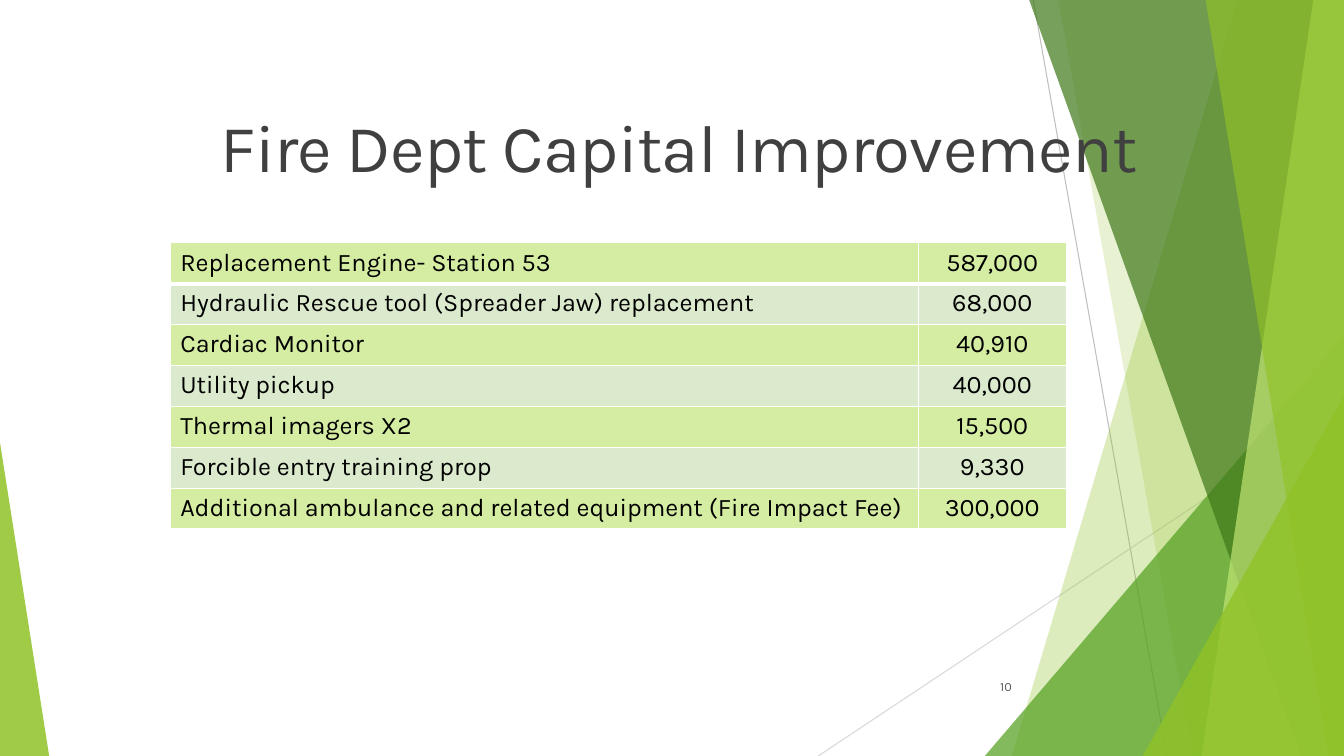
from lxml import etree
from pptx import Presentation
from pptx.dml.color import RGBColor
from pptx.enum.shapes import MSO_CONNECTOR, MSO_SHAPE
from pptx.enum.text import MSO_ANCHOR, PP_ALIGN
from pptx.oxml.ns import qn
from pptx.util import Cm, Pt

STRAIGHT = MSO_CONNECTOR.STRAIGHT
TRIANGLE = MSO_SHAPE.ISOSCELES_TRIANGLE
LEFT, CENTER, RIGHT = PP_ALIGN.LEFT, PP_ALIGN.CENTER, PP_ALIGN.RIGHT
MIDDLE, BOTTOM = MSO_ANCHOR.MIDDLE, MSO_ANCHOR.BOTTOM
FONT = "Karla"
WIDTH, HEIGHT, BLEED_TOP = 33.87, 19.05, -0.02
COLORS = {
    "white": "FFFFFF", "black": "000000", "title": "404040", "number": "595959",
    "line dark": "BFBFBF", "line light": "D9D9D9",
    "lime": "90C226", "green": "54A021", "forest": "3F7819", "pale": "C0E474",
    "odd row": "D5EDA2", "even row": "DBE9CD",
}


def paint(shape, color, opacity):
    """Fill a shape with a see-through colour, without outline or shadow."""
    shape.shadow.inherit = False
    shape.line.fill.background()
    shape.fill.solid()
    shape.fill.fore_color.rgb = RGBColor.from_string(COLORS[color])
    color_element = shape._element.spPr.find(qn("a:solidFill"))[0]
    etree.SubElement(color_element, qn("a:alpha"), val=str(opacity * 1000))


def write(text_frame, text, size, color, alignment):
    paragraph = text_frame.paragraphs[0]
    paragraph.alignment = alignment
    run = paragraph.add_run()
    run.text = text
    run.font.name = FONT
    run.font.size = Pt(size)
    run.font.color.rgb = RGBColor.from_string(COLORS[color])
    return paragraph


presentation = Presentation()
presentation.slide_width = Cm(WIDTH)
presentation.slide_height = Cm(HEIGHT)
slide = presentation.slides.add_slide(presentation.slide_layouts[6])
shapes = slide.shapes

# Thin background lines
for x1, y1, x2, y2, color in [
    (26.04, 0, 29.41, HEIGHT, "line dark"),
    (WIDTH, 10.24, 20.62, HEIGHT, "line light"),
]:
    line = shapes.add_connector(STRAIGHT, Cm(x1), Cm(y1), Cm(x2), Cm(y2))
    line.line.color.rgb = RGBColor.from_string(COLORS[color])
    line.line.width = Pt(0.75)
    etree.SubElement(line._element.spPr, qn("a:effectLst"))

# Overlapping facets: bands are (top x, bottom x) reaching the right edge,
# triangles are (left, top, width, apex position)
for kind, geometry, color, opacity in [
    ("band", (31.19, 25.5), "lime", 30),
    ("band", (26.67, 30.05), "lime", 20),
    ("triangle", (24.82, 8.46, 9.05, 1), "green", 72),
    ("band", (25.93, 32.79), "forest", 70),
    ("band", (33.1, 30.28), "pale", 70),
    ("band", (30.38, 33.48), "lime", 65),
    ("triangle", (28.8, 9.98, 5.07, 1), "lime", 80),
    ("triangle", (0, 11.15, 1.24, 0), "lime", 85),
]:
    if kind == "band":
        top_x, bottom_x = geometry
        builder = shapes.build_freeform(Cm(top_x), Cm(BLEED_TOP))
        corners = [(WIDTH, BLEED_TOP), (WIDTH, HEIGHT), (bottom_x, HEIGHT)]
        builder.add_line_segments([(Cm(x), Cm(y)) for x, y in corners], close=True)
        facet = builder.convert_to_shape()
    else:
        left, top, width, apex = geometry
        facet = shapes.add_shape(TRIANGLE, Cm(left), Cm(top), Cm(width), Cm(HEIGHT - top))
        facet.adjustments[0] = apex
    paint(facet, color, opacity)

# Slide number and title
number_box = shapes.add_textbox(Cm(23.85), Cm(16.79), Cm(1.9), Cm(1.02))
number_box.text_frame.word_wrap = True
number_box.text_frame.vertical_anchor = MIDDLE
write(number_box.text_frame, "10", 9, "number", RIGHT)

title_box = shapes.add_textbox(Cm(5.31), Cm(0.79), Cm(25.68), Cm(4.04))
title_box.text_frame.word_wrap = True
title_box.text_frame.vertical_anchor = BOTTOM
title = write(title_box.text_frame, "Fire Dept Capital Improvement", 48, "title", LEFT)
title.line_spacing = 0.85
title.runs[0].font._element.set("spc", "-50")

# Capital items
items = [
    ("Replacement Engine- Station 53", "587,000"),
    ("Hydraulic Rescue tool (Spreader Jaw) replacement", "68,000"),
    ("Cardiac Monitor", "40,910"),
    ("Utility pickup", "40,000"),
    ("Thermal imagers X2", "15,500"),
    ("Forcible entry training prop", "9,330"),
    ("Additional ambulance and related equipment (Fire Impact Fee)", "300,000"),
]
column_widths = [18.85, 3.73]
row_height = 1.03
table = shapes.add_table(
    len(items), 2, Cm(4.29), Cm(6.12), Cm(sum(column_widths)), Cm(row_height * len(items))
).table
table.first_row = False
table.horz_banding = False
for column, width in zip(table.columns, column_widths):
    column.width = Cm(width)

for row_index, item in enumerate(items):
    table.rows[row_index].height = Cm(row_height)
    for column_index, text in enumerate(item):
        cell = table.cell(row_index, column_index)
        write(cell.text_frame, text, 18, "black", CENTER if column_index else LEFT)
        properties = cell._tc.get_or_add_tcPr()
        for side in ("L", "R", "T", "B"):
            thick = (row_index, side) in [(0, "B"), (1, "T")]
            border = etree.SubElement(
                properties, qn(f"a:ln{side}"), w=str(Pt(3 if thick else 1))
            )
            fill = etree.SubElement(border, qn("a:solidFill"))
            etree.SubElement(fill, qn("a:srgbClr"), val=COLORS["white"])
        cell.fill.solid()
        band = "even row" if row_index % 2 else "odd row"
        cell.fill.fore_color.rgb = RGBColor.from_string(COLORS[band])

presentation.save("out.pptx")
